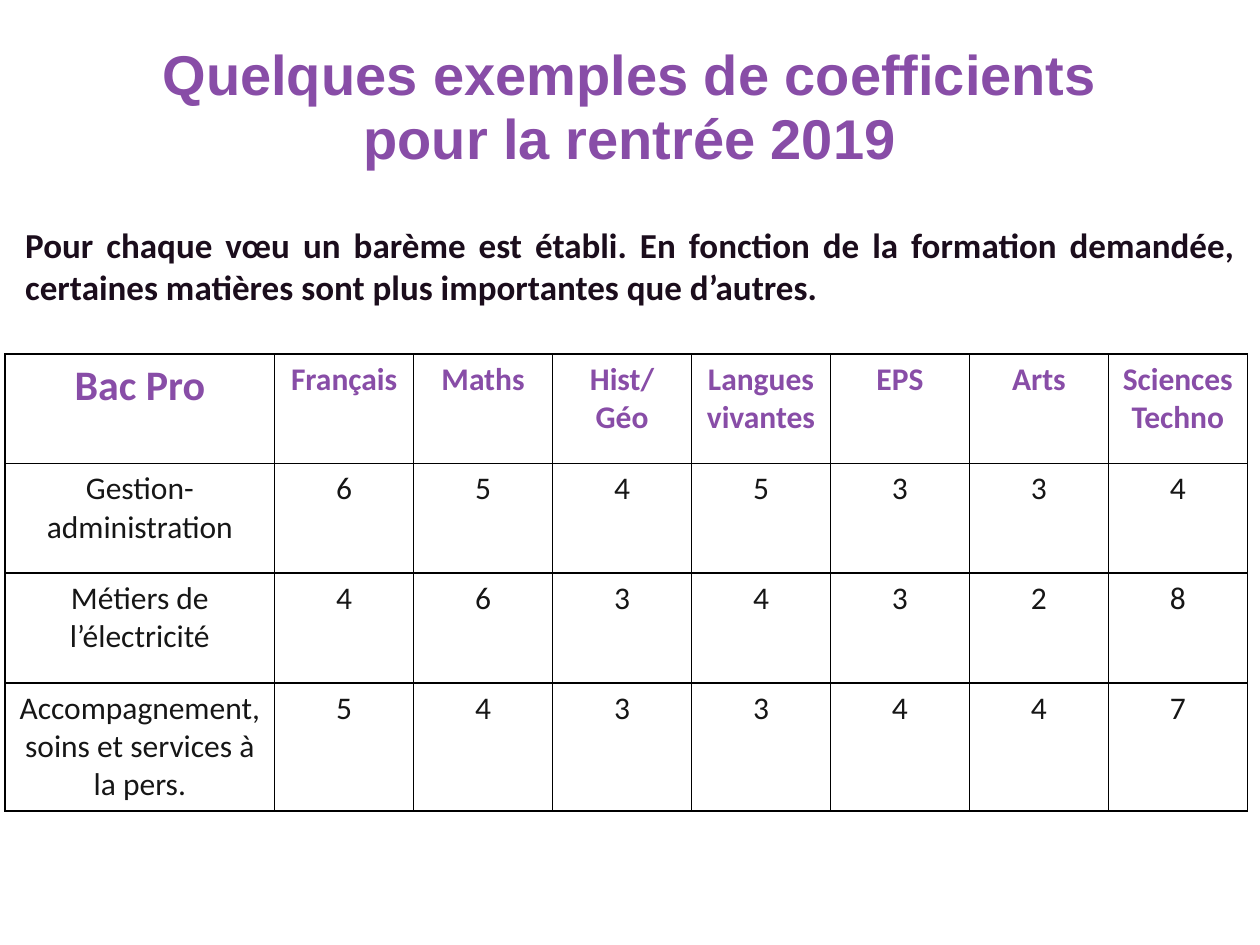
from dataclasses import dataclass

from lxml import etree
from pptx import Presentation
from pptx import util as u
from pptx.dml.color import RGBColor
from pptx.enum import text
from pptx.oxml.ns import qn


@dataclass(frozen=True)
class Theme:
    purple: str = "884DA7"
    ink: str = "161616"
    plum: str = "1B0D1C"
    border: str = "000000"
    title_font: str = "Arial"
    body_font: str = "Calibri"
    title_size: int = 32
    corner_size: int = 24
    intro_size: int = 20
    cell_size: int = 18
    border_width: float = 1


@dataclass(frozen=True)
class Course:
    name: str
    coefficients: tuple[int, ...]


THEME = Theme()
SUBJECTS = ("Français", "Maths", "Hist/\nGéo", "Langues vivantes", "EPS", "Arts", "Sciences Techno")
COURSES = (
    Course("Gestion-administration", (6, 5, 4, 5, 3, 3, 4)),
    Course("Métiers de l’électricité", (4, 6, 3, 4, 3, 2, 8)),
    Course("Accompagnement, soins et services à la pers.", (5, 4, 3, 3, 4, 4, 7)),
)
TABLE_WIDTH, NAME_WIDTH = 9.86, 2.14
ROW_HEIGHTS = (0.87, 0.87, 0.87, 0.84)


def write(tf, content: str, *, size: int, color: str, font: str = THEME.body_font,
          bold: bool = False, align=text.PP_ALIGN.CENTER, spacing: float = 1.0,
          gap: float = 0) -> None:
    """Write one paragraph per line of content; gap is the space between them in points."""
    tf.word_wrap = True
    for i, line in enumerate(content.split("\n")):
        p = tf.paragraphs[0] if i == 0 else tf.add_paragraph()
        p.alignment, p.line_spacing = align, spacing
        p.space_before = u.Pt(gap if i else 0)
        r = p.add_run()
        r.text = line
        r.font.size, r.font.name, r.font.bold = u.Pt(size), font, bold
        r.font.color.rgb = RGBColor.from_string(color)


def place(sp, left: float, top: float, width: float, height: float, anchor) -> None:
    sp.left, sp.top = u.Inches(left), u.Inches(top)
    sp.width, sp.height = u.Inches(width), u.Inches(height)
    sp.text_frame.auto_size = text.MSO_AUTO_SIZE.NONE
    sp.text_frame.vertical_anchor = anchor


def remove_bullet(p) -> None:
    pPr = p._p.get_or_add_pPr()
    pPr.set("marL", "0")
    pPr.set("indent", "0")
    etree.SubElement(pPr, qn("a:buNone"))


def style_cell(cell) -> None:
    """Draw the four borders and leave the cell unfilled."""
    tcPr = cell._tc.get_or_add_tcPr()
    for side in ("lnL", "lnR", "lnT", "lnB"):
        ln = etree.SubElement(tcPr, qn(f"a:{side}"), w=str(u.Pt(THEME.border_width)))
        fill = etree.SubElement(ln, qn("a:solidFill"))
        etree.SubElement(fill, qn("a:srgbClr"), val=THEME.border)
    cell.fill.background()


def add_coefficients(s) -> None:
    rows = [("Bac Pro", *SUBJECTS)]
    rows += [(c.name, *map(str, c.coefficients)) for c in COURSES]
    frame = s.shapes.add_table(len(rows), len(rows[0]), u.Inches(0.04), u.Inches(2.81),
                               u.Inches(TABLE_WIDTH), u.Inches(sum(ROW_HEIGHTS)))
    table = frame.table
    table.horz_banding = False
    subject_width = (TABLE_WIDTH - NAME_WIDTH) / len(SUBJECTS)
    for i, column in enumerate(table.columns):
        column.width = u.Inches(subject_width if i else NAME_WIDTH)
    for row, height in zip(table.rows, ROW_HEIGHTS):
        row.height = u.Inches(height)
    for i, values in enumerate(rows):
        header = i == 0
        for j, value in enumerate(values):
            cell = table.cell(i, j)
            style_cell(cell)
            write(cell.text_frame, value, bold=header,
                  size=THEME.corner_size if header and j == 0 else THEME.cell_size,
                  color=THEME.purple if header else THEME.ink)


def main() -> None:
    prs = Presentation()
    prs.slide_width, prs.slide_height = u.Inches(10), u.Inches(7.5)
    s = prs.slides.add_slide(prs.slide_layouts[1])

    title, intro = s.shapes.title, s.placeholders[1]
    place(title, 0, 0.29, 10, 1.16, text.MSO_ANCHOR.MIDDLE)
    write(title.text_frame, "Quelques exemples de coefficients\npour la rentrée 2019",
          size=THEME.title_size, color=THEME.purple, font=THEME.title_font, bold=True,
          spacing=0.9, gap=2)

    place(intro, 0.1, 1.72, 9.8, 0.43, text.MSO_ANCHOR.TOP)
    write(intro.text_frame,
          "Pour chaque vœu un barème est établi. En fonction de la formation demandée, "
          "certaines matières sont plus importantes que d’autres.",
          size=THEME.intro_size, color=THEME.plum, bold=True, align=text.PP_ALIGN.JUSTIFY)
    remove_bullet(intro.text_frame.paragraphs[0])

    add_coefficients(s)
    prs.save("out.pptx")


if __name__ == "__main__":
    main()
